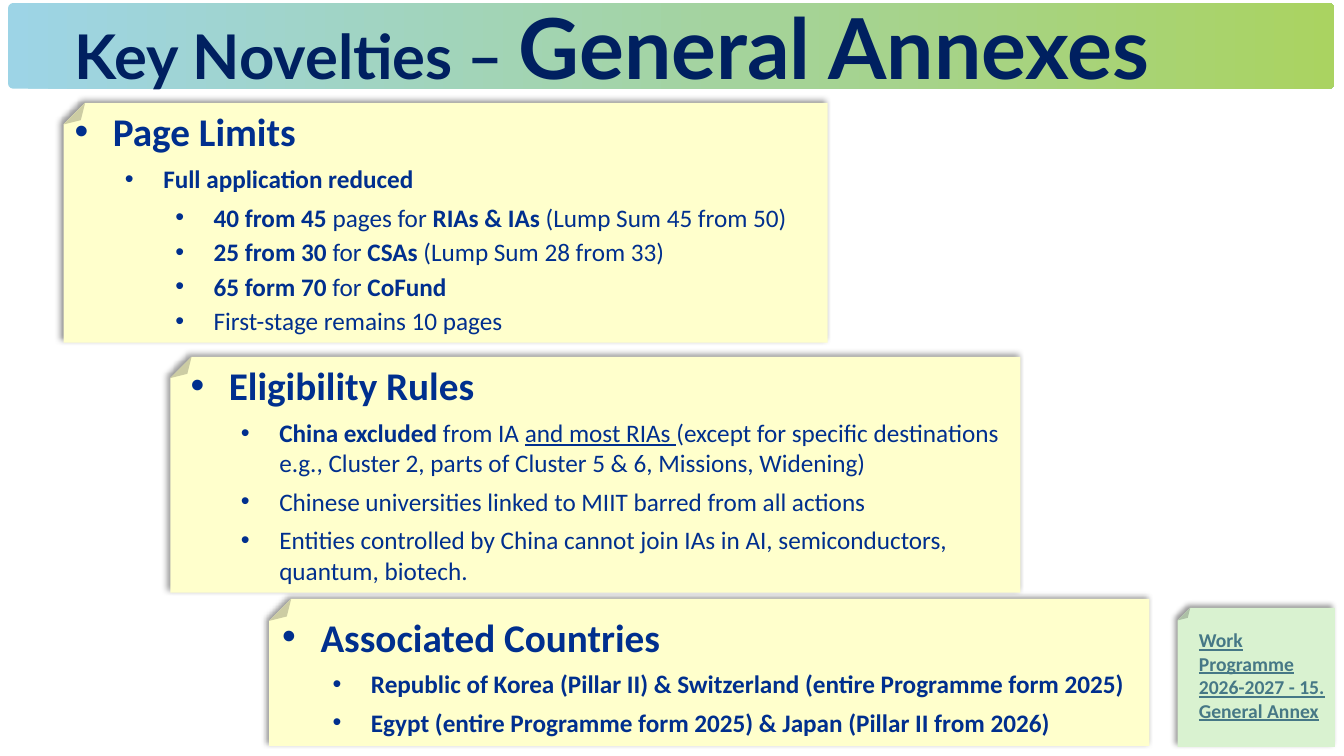
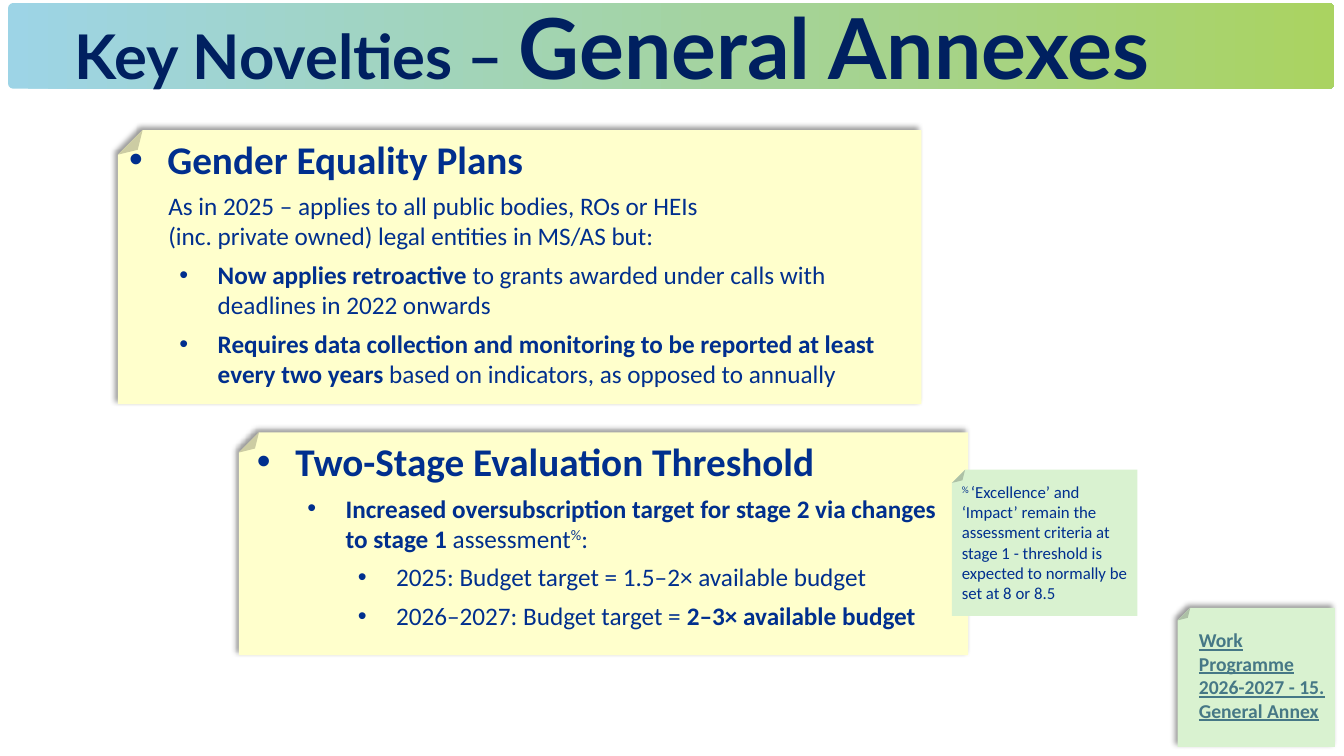
from pptx import Presentation
from pptx import util as u
from pptx.dml import color
from pptx.enum import shapes, text
from pptx.oxml import ns
from lxml import etree

WIDTH, HEIGHT = u.Inches(13.33), u.Inches(7.5)
COLUMN, ROW = WIDTH / 40, HEIGHT / 30

THEME = {
    "band": ("9DD4E6", "AAD361"),
    "note": "FFFFCC",
    "aside": "D9F2D0",
    "title": {"name": "Lato", "color": "002060", "bold": True},
    "title sizes": (44, 60),
    "body": {"name": "Calibri", "color": "002F8E"},
    "shadow": {"blurRad": u.Pt(4), "dist": u.Pt(3), "dir": 225 * 60000,
               "algn": "br", "rotWithShape": 0},
}

SPANS = {
    "strong": {"bold": True},
    "underlined": {"underline": True},
    "raised": {"baseline": 30000},
}

LEVELS = {
    "heading": {"level": 0, "left": 0.38, "bullet": True, "after": 6,
                "font": {"size": 28, "bold": True}},
    "point": {"level": 1, "left": 0.88, "bullet": True, "after": 6, "font": {"size": 18}},
    "detail": {"level": 2, "left": 1.38, "bullet": True, "after": 3, "font": {"size": 18}},
    "option": {"level": 2, "left": 1.38, "bullet": True, "after": 6, "font": {"size": 18}},
    "lead": {"level": 1, "left": 0.39, "bullet": False, "after": 0, "font": {"size": 18}},
    "lead end": {"level": 1, "left": 0.39, "bullet": False, "after": 6, "font": {"size": 18}},
    "footnote": {"level": 0, "left": 0, "bullet": False, "after": 0, "font": {"size": 12}},
    "source": {"level": 0, "left": 0, "bullet": False, "after": 0,
               "font": {"size": 14, "bold": True, "underline": True, "color": "467886"}},
}


def strong(words):
    return words, "strong"


def grid(left, top, width, height):
    return [round(n * unit) for n, unit in
            zip((left, top, width, height), (COLUMN, ROW, COLUMN, ROW))]


def rgb(value):
    return color.RGBColor.from_string(value)


def add_element(parent, tag, **values):
    element = etree.SubElement(parent, ns.qn(tag))
    for key, value in values.items():
        element.set(key, value if isinstance(value, str) else str(int(value)))
    return element


def add_span(para, words, formats):
    span = para.add_run()
    span.text = words
    for key, value in formats.items():
        if key == "color":
            span.font.color.rgb = rgb(value)
        elif key == "baseline":
            span._r.get_or_add_rPr().set("baseline", str(value))
        else:
            setattr(span.font, key, u.Pt(value) if key == "size" else value)


def write_paragraph(para, name, spans):
    level = LEVELS[name]
    para.level = level["level"]
    properties = para._p.get_or_add_pPr()
    properties.set("marL", str(u.Inches(level["left"])))
    properties.set("indent", str(u.Inches(-0.38 if level["bullet"] else 0)))
    if level["bullet"]:
        add_element(properties, "a:buFont", typeface="Arial")
        add_element(properties, "a:buChar", char="•")
    para.space_after = u.Pt(level["after"])
    for span in spans:
        words, style = (span, None) if isinstance(span, str) else span
        add_span(para, words, {**THEME["body"], **level["font"], **SPANS.get(style, {})})


def set_fold(paper, share):
    geometry = paper._element.spPr.find(ns.qn("a:prstGeom"))
    for values in geometry.findall(ns.qn("a:avLst")):
        geometry.remove(values)
    values = add_element(geometry, "a:avLst")
    add_element(values, "a:gd", name="adj", fmla=f"val {round(share * 100000)}")


def add_shadow(shape):
    effects = shape._element.spPr.find(ns.qn("a:effectLst"))
    outer = add_element(effects, "a:outerShdw", **THEME["shadow"])
    black = add_element(outer, "a:srgbClr", val="000000")
    add_element(black, "a:alpha", val=40000)


def add_card(page, area, paragraphs, fill="note", fold=0.09, shadow=True,
             margins=(0.11, 0.05, 0.1)):
    paper = page.shapes.add_shape(shapes.MSO_SHAPE.FOLDED_CORNER, *grid(*area))
    paper.rotation = 180
    set_fold(paper, fold)
    paper.fill.solid()
    paper.fill.fore_color.rgb = rgb(THEME[fill])
    paper.line.fill.background()
    paper.shadow.inherit = False
    if shadow:
        add_shadow(paper)

    box = page.shapes.add_textbox(*grid(*area))
    frame = box.text_frame
    frame.word_wrap = True
    for side, margin in zip(("left", "top", "right"), margins):
        setattr(frame, f"margin_{side}", u.Inches(margin))
    for index, (name, *spans) in enumerate(paragraphs):
        para = frame.add_paragraph() if index else frame.paragraphs[0]
        write_paragraph(para, name, spans)


def add_band(page):
    band = page.shapes.add_shape(shapes.MSO_SHAPE.ROUNDED_RECTANGLE, *grid(0.24, 0.12, 39.46, 3.4))
    band.adjustments[0] = 0.06
    band.shadow.inherit = False
    band.line.fill.background()
    band.fill.gradient()
    band.fill.gradient_angle = 0
    for stop, value in zip(band.fill.gradient_stops, THEME["band"]):
        stop.color.rgb = rgb(value)


def add_title(page, *parts):
    title = page.shapes.title
    title.left, title.top, title.width, title.height = grid(1.92, -0.36, 37.78, 4.44)
    page.shapes.element.append(title.element)
    frame = title.text_frame
    frame.word_wrap = True
    frame.auto_size = text.MSO_AUTO_SIZE.NONE
    frame.vertical_anchor = text.MSO_ANCHOR.TOP
    para = frame.paragraphs[0]
    para.alignment = text.PP_ALIGN.LEFT
    for words, size in zip(parts, THEME["title sizes"]):
        add_span(para, words, {**THEME["title"], "size": size})


def add_page(deck):
    page = deck.slides.add_slide(deck.slide_layouts.get_by_name("Title Only"))
    add_band(page)
    add_title(page, "Key Novelties – ", "General Annexes")
    add_card(page, (35.05, 24.12, 4.68, 5.52),
             [("source", "Work Programme 2026-2027 - 15. General Annex")],
             fill="aside", margins=(0.21, 0.2, 0.07))
    return page


def build_rules(deck):
    page = add_page(deck)
    add_card(page, (1.89, 4.08, 22.74, 9.52), [
        ("heading", "Page Limits"),
        ("point", strong("Full application reduced")),
        ("detail", strong("40 from 45 "), "pages for ", strong("RIAs & IAs "),
         "(Lump Sum 45 from 50)"),
        ("detail", strong("25 from 30 "), "for ", strong("CSAs"), " (Lump Sum 28 from 33)"),
        ("detail", strong("65 form 70 "), "for ", strong("CoFund")),
        ("detail", "First-stage remains 10 pages"),
    ])
    add_card(page, (8.01, 23.76, 26.2, 5.84), [
        ("heading", "Associated Countries"),
        ("point", strong("Republic of Korea (Pillar II) & Switzerland "
                         "(entire Programme form 2025)")),
        ("point", strong("Egypt (entire Programme form 2025) & Japan (Pillar II from 2026)")),
    ], fold=0.15, margins=(0.13, 0.14, 0.1))
    add_card(page, (5.07, 14.16, 25.3, 9.36), [
        ("heading", "Eligibility Rules"),
        ("point", strong("China excluded "), "from IA ", ("and most RIAs ", "underlined"),
         "(except for specific destinations e.g., Cluster 2, parts of Cluster 5 & 6, "
         "Missions, Widening)"),
        ("point", "Chinese universities linked to MIIT barred from all actions"),
        ("point", "Entities controlled by China cannot join IAs in AI, semiconductors, "
                  "quantum, biotech."),
    ], margins=(0.2, 0.05, 0.2))


def build_plans(deck):
    page = add_page(deck)
    add_card(page, (7.11, 17.16, 21.7, 8.84), [
        ("heading", "Two-Stage Evaluation Threshold"),
        ("point", strong("Increased oversubscription target for stage 2 via changes to stage 1"),
         " assessment", ("%", "raised"), ":"),
        ("option", "2025: Budget target = 1.5–2× available budget"),
        ("option", "2026–2027: Budget target = ", strong("2–3× available budget")),
    ], margins=(0.18, 0.05, 0.18))
    add_card(page, (3.51, 5.16, 23.91, 10.88), [
        ("heading", "Gender Equality Plans"),
        ("lead", "As in 2025 – applies to all public bodies, ROs or HEIs"),
        ("lead end", "(inc. private owned) legal entities in MS/AS but:"),
        ("point", strong("Now applies retroactive "),
         "to grants awarded under calls with deadlines in 2022 onwards"),
        ("point", strong("Requires data collection and monitoring to be reported at least "
                         "every two years "),
         "based on indicators, as opposed to annually"),
    ])
    add_card(page, (28.33, 18.64, 5.52, 5.8), [
        ("footnote", ("% ", "raised"),
         "‘Excellence’ and ‘Impact’ remain the assessment criteria at stage 1 - "
         "threshold is expected to normally be set at 8 or 8.5"),
    ], fill="aside", shadow=False, margins=(0.1, 0.12, 0.1))


def main():
    deck = Presentation()
    deck.slide_width, deck.slide_height = WIDTH, HEIGHT
    build_rules(deck)
    build_plans(deck)
    deck.save("out.pptx")


if __name__ == "__main__":
    main()
